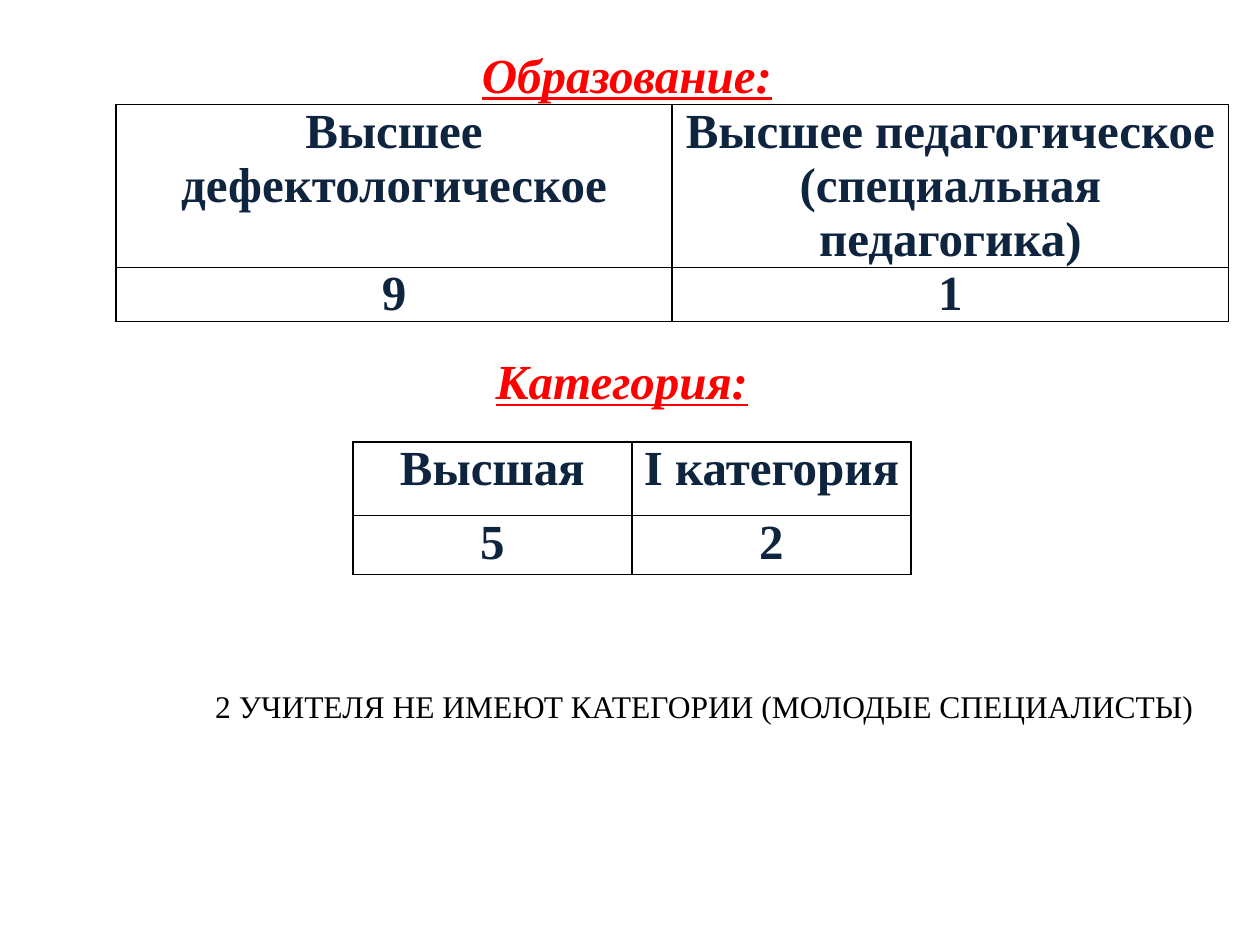
from lxml.etree import SubElement
from pptx import Presentation
from pptx.dml.color import RGBColor
from pptx.enum.text import MSO_ANCHOR, MSO_AUTO_SIZE, PP_ALIGN
from pptx.oxml.ns import qn
from pptx.util import Inches, Pt

FONT = "Times New Roman"
RED = RGBColor(0xFF, 0x00, 0x00)
NAVY = RGBColor(0x0F, 0x24, 0x3E)
BLACK = RGBColor(0x00, 0x00, 0x00)


def add_run(paragraph, text, size, color, bold=False, italic=False, underline=False):
    run = paragraph.add_run()
    run.text = text
    font = run.font
    font.name = FONT
    font.size = Pt(size)
    font.color.rgb = color
    font.bold = bold
    font.italic = italic
    font.underline = underline


def write_heading(shape, text):
    """Red underlined heading, centred in its box."""
    frame = shape.text_frame
    frame.word_wrap = False
    frame.auto_size = MSO_AUTO_SIZE.NONE
    frame.vertical_anchor = MSO_ANCHOR.MIDDLE
    paragraph = frame.paragraphs[0]
    paragraph.alignment = PP_ALIGN.CENTER
    add_run(paragraph, text, 28, RED, bold=True, italic=True, underline=True)


def add_borders(cell):
    properties = cell._tc.get_or_add_tcPr()
    for side in ("a:lnL", "a:lnR", "a:lnT", "a:lnB"):
        line = SubElement(properties, qn(side), w=str(Pt(1)))
        fill = SubElement(line, qn("a:solidFill"))
        SubElement(fill, qn("a:srgbClr"), val=str(BLACK))


def format_cell(cell, text):
    add_borders(cell)
    cell.fill.background()
    cell.margin_left = cell.margin_right = Inches(0.07)
    cell.margin_top = cell.margin_bottom = 0
    paragraph = cell.text_frame.paragraphs[0]
    paragraph.alignment = PP_ALIGN.CENTER
    add_run(paragraph, text, 28, NAVY, bold=True)


def add_grid(slide, left, top, width, row_heights, rows):
    """Plain black-ruled table with equal columns."""
    shape = slide.shapes.add_table(
        len(rows), len(rows[0]), Inches(left), Inches(top),
        Inches(width), Inches(sum(row_heights)))
    table = shape.table
    table.first_row = False
    table.horz_banding = False
    for row, height, texts in zip(table.rows, row_heights, rows):
        row.height = Inches(height)
        for cell, text in zip(row.cells, texts):
            format_cell(cell, text)


def main():
    presentation = Presentation()
    presentation.slide_width = Inches(10)
    presentation.slide_height = Inches(7.5)
    slide = presentation.slides.add_slide(presentation.slide_layouts[5])

    # Education
    title = slide.shapes.title
    title.left, title.top = Inches(3.5), Inches(0.3)
    title.width, title.height = Inches(2.95), Inches(0.57)
    write_heading(title, "Образование:")
    add_grid(slide, 0.92, 0.83, 8.83, (1.29, 0.43), (
        ("Высшее дефектологическое", "Высшее педагогическое (специальная педагогика)"),
        ("9", "1"),
    ))

    # Category
    heading = slide.shapes.add_textbox(
        Inches(3.82), Inches(2.73), Inches(2.23), Inches(0.57))
    write_heading(heading, "Категория:")
    add_grid(slide, 2.8, 3.51, 4.43, (0.58, 0.47), (
        ("Высшая", "I категория"),
        ("5", "2"),
    ))

    # Remark on teachers without a category
    remark = slide.shapes.add_textbox(
        Inches(1.61), Inches(5.4), Inches(8.05), Inches(0.4))
    remark.text_frame.word_wrap = False
    add_run(remark.text_frame.paragraphs[0],
            "2 УЧИТЕЛЯ НЕ ИМЕЮТ КАТЕГОРИИ (МОЛОДЫЕ СПЕЦИАЛИСТЫ)", 18, BLACK)

    presentation.save("out.pptx")


if __name__ == "__main__":
    main()
